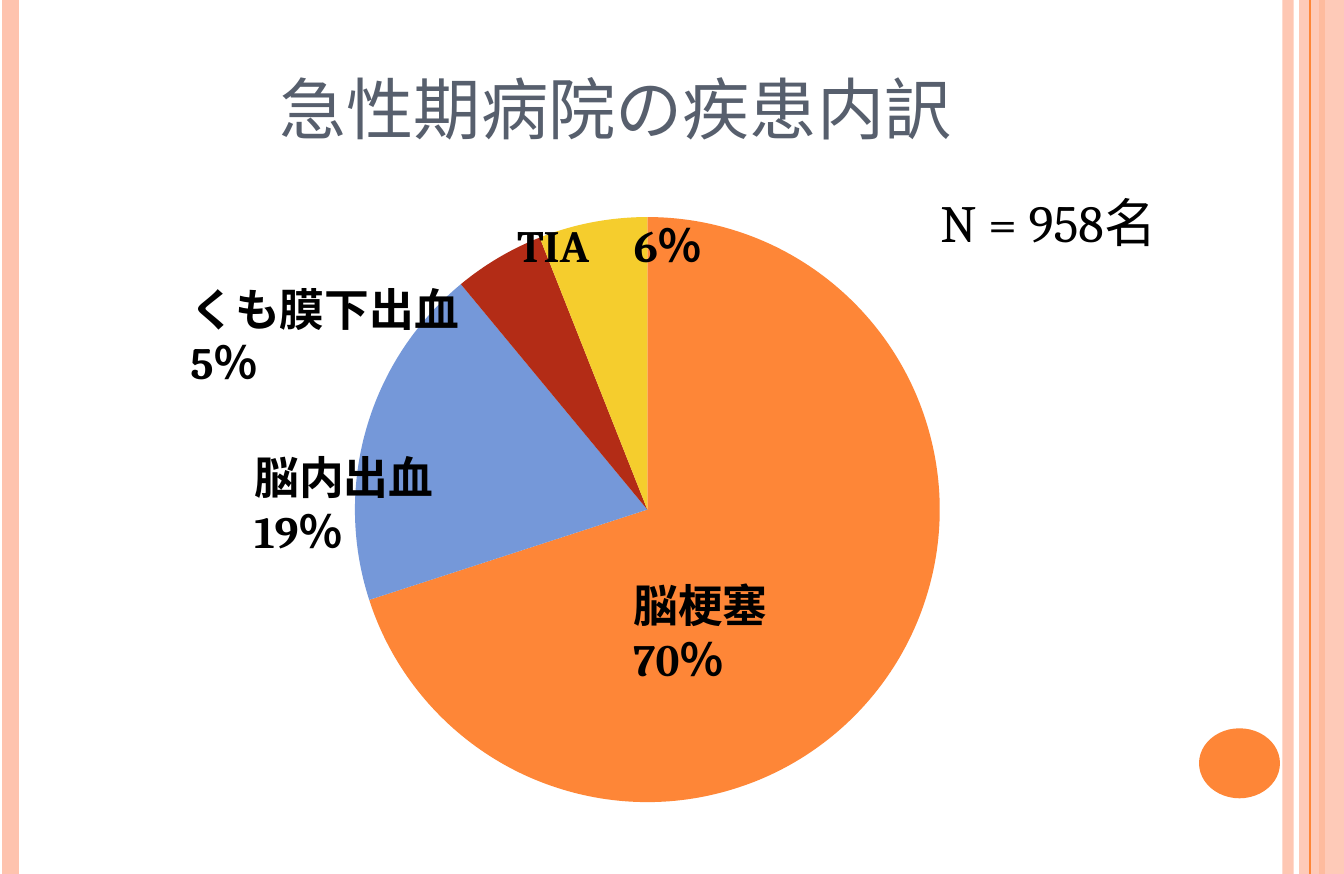
from lxml import etree
from pptx import Presentation
from pptx.chart.data import CategoryChartData
from pptx.dml.color import RGBColor
from pptx.enum.chart import XL_CHART_TYPE
from pptx.enum.shapes import MSO_CONNECTOR, MSO_SHAPE
from pptx.enum.text import MSO_ANCHOR, MSO_AUTO_SIZE, PP_ALIGN
from pptx.oxml.ns import qn
from pptx.util import Inches, Pt

PIE = XL_CHART_TYPE.PIE
STRAIGHT = MSO_CONNECTOR.STRAIGHT
RECTANGLE, OVAL = MSO_SHAPE.RECTANGLE, MSO_SHAPE.OVAL
MIDDLE, CENTER = MSO_ANCHOR.MIDDLE, PP_ALIGN.CENTER
NO_FIT = MSO_AUTO_SIZE.NONE

ORANGE = RGBColor(0xFE, 0x86, 0x37)
PEACH = RGBColor(0xFE, 0xC3, 0xAE)
BLUE = RGBColor(0x75, 0x98, 0xD9)
RED = RGBColor(0xB3, 0x2C, 0x16)
YELLOW = RGBColor(0xF5, 0xCD, 0x2D)
SLATE = RGBColor(0x57, 0x5F, 0x6D)
BLACK = RGBColor(0, 0, 0)

FONT = "Cambria"
SCALE = Inches(1) / 268.8

TITLE = "急性期病院の疾患内訳"
TITLE_BOX = (67, 35, 1097, 145)
DISEASES = [
    ("脳梗塞", 70, ORANGE, (607, 564, 315, 81)),
    ("脳内出血", 19, BLUE, (228, 436, 360, 81)),
    ("くも膜下出血", 5, RED, (164, 268, 400, 81)),
    ("TIA", 6, YELLOW, (491, 204, 242, 81)),
]
TOTAL = ("N = 958名", (914, 177, 298, 91))
CHART_BOX = (81, 180, 1137, 659)
PIE_BOX = (355, 217, 585, 585)
STRIPES_BEHIND = [(1288, PEACH, 3, 93), (11, PEACH, 4.5, 100), (1322, ORANGE, 1.5, 100)]
BAND = (1299, 0, 45, 874)
STRIPES_FRONT = [(1310, ORANGE, 0.75, 100)]
DOT = (1199, 728, 81, 70)


def px(*lengths):
    return [round(length * SCALE) for length in lengths]


def set_opacity(fill_parent, percent):
    for color in fill_parent.iter(qn("a:srgbClr")):
        etree.SubElement(color, qn("a:alpha")).set("val", str(percent * 1000))


def add_stripe(page, x, color, width, opacity):
    left, bottom = px(x, 874)
    stripe = page.shapes.add_connector(STRAIGHT, left, 0, left, bottom)
    stripe.line.color.rgb = color
    stripe.line.width = Pt(width)
    properties = stripe._element.spPr
    if opacity < 100:
        set_opacity(properties, opacity)
    etree.SubElement(properties, qn("a:effectLst"))


def add_shape(page, kind, box, color):
    shape = page.shapes.add_shape(kind, *px(*box))
    shape.shadow.inherit = False
    shape.fill.solid()
    shape.fill.fore_color.rgb = color
    shape.line.fill.background()
    return shape


def style(font, size, color=BLACK, bold=False):
    font.name, font.size, font.bold = FONT, Pt(size), bold
    font.color.rgb = color


def add_label(page, text, box, size, bold, wrap):
    label = page.shapes.add_textbox(*px(*box))
    label.text_frame.word_wrap = wrap
    label.text_frame.text = text
    style(label.text_frame.paragraphs[0].runs[0].font, size, bold=bold)


def add_title(page):
    title = page.shapes.title
    title.left, title.top, title.width, title.height = px(*TITLE_BOX)
    frame = title.text_frame
    frame.text = TITLE
    frame.auto_size = NO_FIT
    frame.vertical_anchor = MIDDLE
    frame.margin_left = frame.margin_right = Inches(0.05)
    frame.margin_top = frame.margin_bottom = Inches(0.02)
    para = frame.paragraphs[0]
    para.alignment = CENTER
    style(para.runs[0].font, 18, SLATE)


def add_pie(page):
    data = CategoryChartData()
    data.categories = [name for name, *_ in DISEASES]
    data.add_series("割合", [share for _, share, *_ in DISEASES])
    chart = page.shapes.add_chart(PIE, *px(*CHART_BOX), data).chart
    chart.has_legend = chart.has_title = False
    style(chart.font, 10)
    plot = chart.plots[0]
    plot.vary_by_categories = True
    for index, (_, _, color, _) in enumerate(DISEASES):
        fill = plot.series[0].points[index].format.fill
        fill.solid()
        fill.fore_color.rgb = color

    area = chart._chartSpace.find(".//" + qn("c:plotArea"))
    layout = area.find(qn("c:layout"))
    if layout is None:
        layout = etree.Element(qn("c:layout"))
        area.insert(0, layout)
    left, top, width, height = CHART_BOX
    pie_left, pie_top, pie_width, pie_height = PIE_BOX
    manual = etree.SubElement(layout, qn("c:manualLayout"))
    for tag, value in [
        ("layoutTarget", "inner"), ("xMode", "edge"), ("yMode", "edge"),
        ("x", (pie_left - left) / width), ("y", (pie_top - top) / height),
        ("w", pie_width / width), ("h", pie_height / height),
    ]:
        etree.SubElement(manual, qn("c:" + tag)).set("val", str(value))


def main():
    deck = Presentation()
    deck.slide_width, deck.slide_height = Inches(5), Inches(3.25)
    page = deck.slides.add_slide(deck.slide_layouts[5])
    for stripe in STRIPES_BEHIND:
        add_stripe(page, *stripe)
    band = add_shape(page, RECTANGLE, BAND, PEACH)
    set_opacity(band._element.spPr, 87)
    for stripe in STRIPES_FRONT:
        add_stripe(page, *stripe)
    add_shape(page, OVAL, DOT, ORANGE)
    add_title(page)
    add_pie(page)
    for name, share, _, box in DISEASES:
        add_label(page, f"{name}　{share}％", box, 12, bold=True, wrap=True)
    add_label(page, *TOTAL, 14, bold=False, wrap=False)
    deck.save("out.pptx")


if __name__ == "__main__":
    main()
